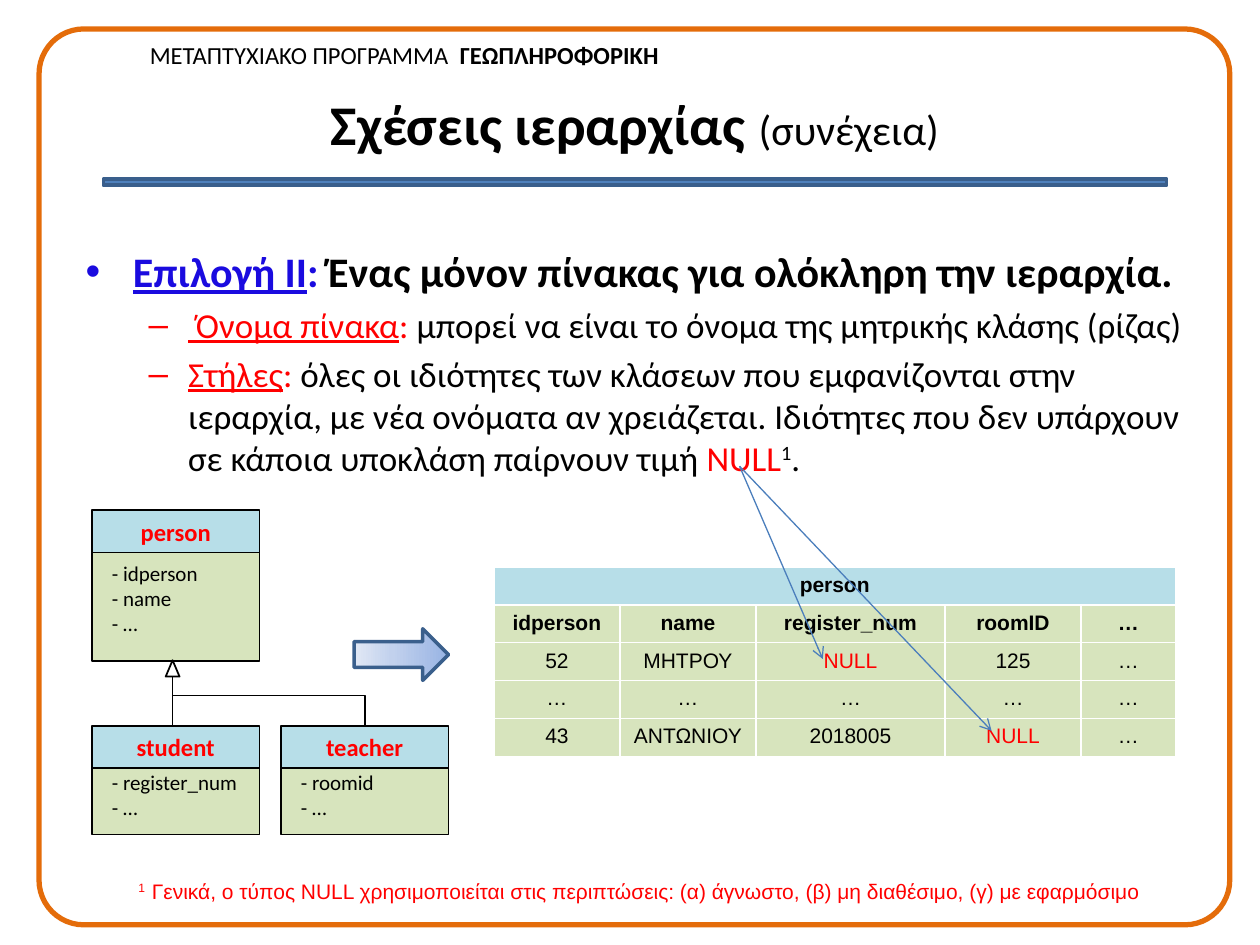
import copy

import pptx
import pptx.dml.color
import pptx.enum.shapes
import pptx.enum.text
import pptx.oxml.ns
import pptx.util
from lxml import etree

# The slide is a grid of 100 columns by 75 rows, each cell 0.1 inch square.
CELL = pptx.util.Inches(0.1)
COLORS = {
    "black": "000000", "red": "FF0000", "link": "1A0BDF", "orange": "E46C0A",
    "bar": "4F81BD", "bar_edge": "3A5F8C", "pointer": "4B7EBC",
    "head": "B7DEE8", "body": "D7E4BD",
    "arrow_dark": "9AB5E4", "arrow_mid": "C2D1ED", "arrow_light": "E1E8F5",
}
SHAPE = pptx.enum.shapes.MSO_SHAPE
ALIGN = pptx.enum.text.PP_ALIGN
MIDDLE = pptx.enum.text.MSO_ANCHOR.MIDDLE
CLASS_WIDTH, HEAD_HEIGHT = 13.3, 3.35


def rgb(name):
    return pptx.dml.color.RGBColor.from_string(COLORS[name])


def grid(*cells):
    return [round(cell * CELL) for cell in cells]


def add_run(paragraph, text, size=12, font="Calibri", color="black", bold=False,
            underline=None, superscript=False):
    run = paragraph.add_run()
    run.text = text
    run.font.size = pptx.util.Pt(size)
    run.font.name = font
    run.font.bold = bold
    run.font.underline = underline
    run.font.color.rgb = rgb(color)
    if superscript:
        run.font._element.set("baseline", "30000")


def write(frame, paragraphs, align=None, **text_format):
    """Fill a frame; each paragraph is a list of (text, format changes)."""
    for index, runs in enumerate(paragraphs):
        paragraph = frame.paragraphs[0] if index == 0 else frame.add_paragraph()
        paragraph.alignment = align
        for text, changes in runs:
            add_run(paragraph, text, **{**text_format, **changes})


def add_label(slide, place, paragraphs, **text_format):
    frame = slide.shapes.add_textbox(*grid(*place)).text_frame
    frame.word_wrap = False
    write(frame, paragraphs, **text_format)


def style_outline(shape, color, width):
    shape.line.color.rgb = rgb(color)
    shape.line.width = pptx.util.Pt(width)


def add_box(slide, kind, place, fill=None, line="black", width=1):
    shape = slide.shapes.add_shape(kind, *grid(*place))
    shape.shadow.inherit = False
    if fill:
        shape.fill.solid()
        shape.fill.fore_color.rgb = rgb(fill)
    else:
        shape.fill.background()
    style_outline(shape, line, width)
    return shape


def add_line(slide, start, end, color="black", width=1, arrow=False):
    connector = slide.shapes.add_connector(
        pptx.enum.shapes.MSO_CONNECTOR.STRAIGHT, *grid(*start, *end))
    style_outline(connector, color, width)
    qn = pptx.oxml.ns.qn
    if arrow:
        etree.SubElement(connector.line._get_or_add_ln(), qn("a:tailEnd"), type="arrow")
    etree.SubElement(connector._element.spPr, qn("a:effectLst"))


def add_class(slide, left, top, name, attributes, body_height, text_top):
    body_top = top + HEAD_HEIGHT
    head = add_box(slide, SHAPE.RECTANGLE, (left, top, CLASS_WIDTH, HEAD_HEIGHT), "head")
    head.text_frame.vertical_anchor = MIDDLE
    write(head.text_frame, [[(name, {})]], ALIGN.CENTER, size=14, color="red", bold=True)
    add_box(slide, SHAPE.RECTANGLE, (left, body_top, CLASS_WIDTH, body_height), "body")
    add_label(slide, (left + 0.6, text_top, 12, 2.1 * len(attributes) + 0.8),
              [[("- " + attribute, {})] for attribute in attributes])


def add_inheritance(slide):
    add_line(slide, (13.7, 53.7), (13.7, 57.6))
    add_box(slide, SHAPE.ISOSCELES_TRIANGLE, (13.15, 52.4, 1.1, 1.3))
    builder = slide.shapes.build_freeform(*grid(13.7, 55.2))
    builder.add_line_segments([grid(28.95, 55.2), grid(28.95, 57.6)], close=False)
    branch = builder.convert_to_shape()
    branch.shadow.inherit = False
    branch.fill.background()
    style_outline(branch, "black", 1)


def add_gradient_arrow(slide):
    arrow = add_box(slide, SHAPE.RIGHT_ARROW, (28.1, 49.9, 7.5, 4.1),
                    line="bar_edge", width=2)
    arrow.fill.gradient()
    arrow.fill.gradient_angle = 180
    stop_list = arrow._element.xpath(".//a:gsLst")[0]
    stop_list.append(copy.deepcopy(stop_list[-1]))
    settings = [(0.02, "arrow_dark"), (0.6, "arrow_mid"), (1, "arrow_light")]
    for stop, (position, color) in zip(arrow.fill.gradient_stops, settings):
        stop.position = position
        stop.color.rgb = rgb(color)


def add_person_table(slide):
    rows = [
        ["person", "", "", "", ""],
        ["idperson", "name", "register_num", "roomID", "…"],
        ["52", "ΜΗΤΡΟΥ", "NULL", "125", "…"],
        ["…"] * 5,
        ["43", "ΑΝΤΩΝΙΟΥ", "2018005", "NULL", "…"],
    ]
    widths = [10, 10.8, 15, 10.8, 7.5]
    table = slide.shapes.add_table(
        len(rows), len(widths), *grid(39.2, 45, sum(widths), 14.3)).table
    table.horz_banding = False
    for column, width in zip(table.columns, grid(*widths)):
        column.width = width
    table.cell(0, 0).merge(table.cell(0, len(widths) - 1))
    for row_index, row in enumerate(rows):
        for column_index, text in enumerate(row):
            cell = table.cell(row_index, column_index)
            cell.fill.solid()
            cell.fill.fore_color.rgb = rgb("body" if row_index else "head")
            if text:
                write(cell.text_frame, [[(text, {})]], ALIGN.CENTER, font="Arial",
                      bold=row_index < 2, color="red" if text == "NULL" else "black")


def place_placeholder(shape, place):
    shape.left, shape.top, shape.width, shape.height = grid(*place)
    shape.text_frame.auto_size = pptx.enum.text.MSO_AUTO_SIZE.NONE
    return shape.text_frame


def add_title(slide):
    frame = place_placeholder(slide.shapes.title, (5.4, 5, 90, 9.5))
    frame.vertical_anchor = MIDDLE
    write(frame, [[("Σχέσεις ιεραρχίας ", {"size": 32, "bold": True}),
                   ("(συνέχεια)", {"size": 24})]], ALIGN.CENTER)


def add_body(slide):
    frame = place_placeholder(slide.placeholders[1], (5.8, 18.3, 90, 20.8))
    option = {"size": 24, "bold": True}
    link = {**option, "color": "link"}
    red = {"color": "red"}
    term = {**red, "underline": True}
    write(frame, [
        [("Επιλογή ΙI", {**link, "underline": True}), (": ", link),
         ("Ένας μόνον πίνακας για ολόκληρη την ιεραρχία.", option)],
        [(" Όνομα πίνακα", term), (": ", red),
         ("μπορεί να είναι το όνομα της μητρικής κλάσης (ρίζας)", {})],
        [("Στήλες", term), (": ", red),
         ("όλες οι ιδιότητες των κλάσεων που εμφανίζονται στην ιεραρχία, με νέα "
          "ονόματα αν χρειάζεται. Ιδιότητες που δεν υπάρχουν σε κάποια υποκλάση "
          "παίρνουν τιμή ", {}),
         ("NULL", red), ("1", {"superscript": True}), (".", {})],
    ], size=20)
    frame.paragraphs[0].space_before = pptx.util.Pt(0)
    frame.margin_top = pptx.util.Inches(0.12)
    for paragraph in frame.paragraphs[1:]:
        paragraph.level = 1


def main():
    presentation = pptx.Presentation()
    presentation.slide_width, presentation.slide_height = grid(100, 75)
    slide = presentation.slides.add_slide(presentation.slide_layouts[1])

    add_label(slide, (10.9, 2.7, 42.8, 3.4),
              [[("ΜΕΤΑΠΤΥΧΙΑΚΟ ΠΡΟΓΡΑΜΜΑ  ", {}), ("ΓΕΩΠΛΗΡΟΦΟΡΙΚΗ", {"bold": True})]],
              size=14)
    add_box(slide, SHAPE.RECTANGLE, (8.2, 14.2, 84.4, 0.5), "bar", "bar_edge", 2)
    border = add_box(slide, SHAPE.ROUNDED_RECTANGLE, (3.1, 2.3, 94.5, 71.1),
                     line="orange", width=3)
    border.adjustments[0] = 0.05
    add_title(slide)
    add_body(slide)

    add_person_table(slide)
    add_class(slide, 7.3, 40.5, "person", ["idperson", "name", "…"], 8.6, 44)
    add_class(slide, 7.3, 57.6, "student", ["register_num", "…"], 5.3, 60.6)
    add_class(slide, 22.3, 57.6, "teacher", ["roomid", "…"], 5.3, 60.6)
    add_inheritance(slide)
    add_gradient_arrow(slide)
    for null_cell in [(65.3, 52.3), (78.7, 58)]:
        add_line(slide, (58.7, 37), null_cell, "pointer", 0.75, arrow=True)

    add_label(slide, (10, 69.2, 82.8, 3),
              [[("1  ", {"superscript": True}),
                ("Γενικά, ο τύπος NULL χρησιμοποιείται στις περιπτώσεις: (α) άγνωστο, "
                 "(β) μη διαθέσιμο, (γ) με εφαρμόσιμο", {})]], font="Arial", color="red")
    presentation.save("out.pptx")


if __name__ == "__main__":
    main()
